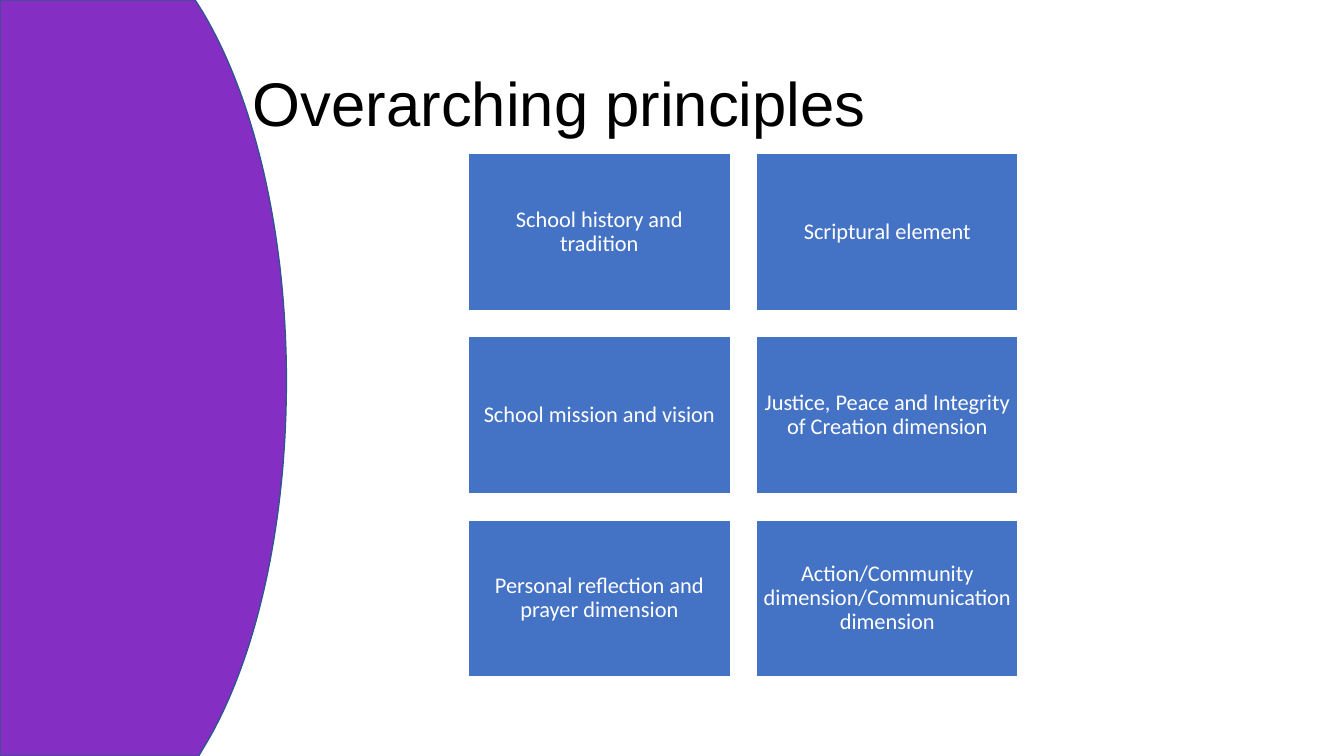
from pptx import Presentation
from pptx.dml.color import RGBColor
from pptx.enum import shapes, text
from pptx.util import Pt

PURPLE = RGBColor(0x84, 0x2E, 0xC3)
NAVY = RGBColor(0x32, 0x54, 0x91)
BLUE = RGBColor(0x44, 0x72, 0xC4)
WHITE = RGBColor(0xFF, 0xFF, 0xFF)
BLACK = RGBColor(0, 0, 0)

PRINCIPLES = [
    "School history and tradition",
    "Scriptural element",
    "School mission and vision",
    "Justice, Peace and Integrity of Creation dimension",
    "Personal reflection and prayer dimension",
    "Action/Community dimension/Communication dimension",
]


def bezier(start, first, second, end, steps=40):
    """Return points along a cubic curve, without its start."""
    points = []
    for step in range(1, steps + 1):
        t = step / steps
        weights = ((1 - t) ** 3, 3 * t * (1 - t) ** 2, 3 * t * t * (1 - t), t ** 3)
        points.append(tuple(
            sum(weight * value for weight, value in zip(weights, values))
            for values in zip(start, first, second, end)))
    return points


def write(paragraph, words, font_name, size, color):
    """Add one formatted run to a paragraph."""
    paragraph.line_spacing = 0.9
    span = paragraph.add_run()
    span.text = words
    span.font.name = font_name
    span.font.size = Pt(size)
    span.font.color.rgb = color


def add_side_panel(page, left, top, width, height):
    """Draw the purple panel with its bulging right edge."""
    upper, tip, lower = (0.683, 0.001), (1, 0.504), (0.711, 0.989)
    edge = [(0.68, 0), upper]
    edge += bezier(upper, (0.873, 0.111), (1, 0.295), tip)
    edge += bezier(tip, (1, 0.703), (0.887, 0.88), lower)
    edge += [(0.694, 1), (0, 1)]
    builder = page.shapes.build_freeform(Pt(left), Pt(top))
    builder.add_line_segments(
        [(Pt(left + x * width), Pt(top + y * height)) for x, y in edge], close=True)
    panel = builder.convert_to_shape()
    panel.shadow.inherit = False
    panel.fill.solid()
    panel.fill.fore_color.rgb = PURPLE
    panel.line.color.rgb = NAVY
    panel.line.width = Pt(1)


def add_title(page, left, top, width, height):
    """Place the slide title in front of the panel."""
    title = page.shapes.title
    title.left, title.top, title.width, title.height = map(Pt, (left, top, width, height))
    page.shapes._spTree.append(title._element)
    frame = title.text_frame
    frame.word_wrap = True
    frame.auto_size = text.MSO_AUTO_SIZE.NONE
    frame.vertical_anchor = text.MSO_ANCHOR.MIDDLE
    para = frame.paragraphs[0]
    para.alignment = text.PP_ALIGN.LEFT
    write(para, "Overarching principles", "Arial", 44, BLACK)


def add_principle(page, words, left, top, width, height):
    """Draw one blue box with its centred label."""
    box = page.shapes.add_shape(
        shapes.MSO_SHAPE.RECTANGLE, *map(Pt, (left, top, width, height)))
    box.shadow.inherit = False
    box.fill.solid()
    box.fill.fore_color.rgb = BLUE
    box.line.color.rgb = WHITE
    box.line.width = Pt(1)
    frame = box.text_frame
    frame.word_wrap = True
    frame.vertical_anchor = text.MSO_ANCHOR.MIDDLE
    frame.margin_left = frame.margin_right = Pt(4.8)
    frame.margin_top = frame.margin_bottom = Pt(4.8)
    para = frame.paragraphs[0]
    para.alignment = text.PP_ALIGN.CENTER
    write(para, words, "Calibri", 16, WHITE)


def add_principles(page, left, top, width, height, columns=2, gap=18.7):
    """Lay the principles out in an even grid."""
    rows = len(PRINCIPLES) // columns
    box_width = (width - gap * (columns - 1)) / columns
    box_height = (height - gap * (rows - 1)) / rows
    for index, words in enumerate(PRINCIPLES):
        row, column = divmod(index, columns)
        add_principle(page, words, left + column * (box_width + gap),
                      top + row * (box_height + gap), box_width, box_height)


def main():
    """Build and save the deck."""
    deck = Presentation()
    deck.slide_width, deck.slide_height = Pt(960), Pt(540)
    page = deck.slides.add_slide(deck.slide_layouts[5])
    add_side_panel(page, 0, 0, 204.6, 540)
    add_title(page, 173.5, 23.8, 828, 104.4)
    add_principles(page, 334.6, 109.6, 392.7, 374)
    deck.save("out.pptx")


if __name__ == "__main__":
    main()
